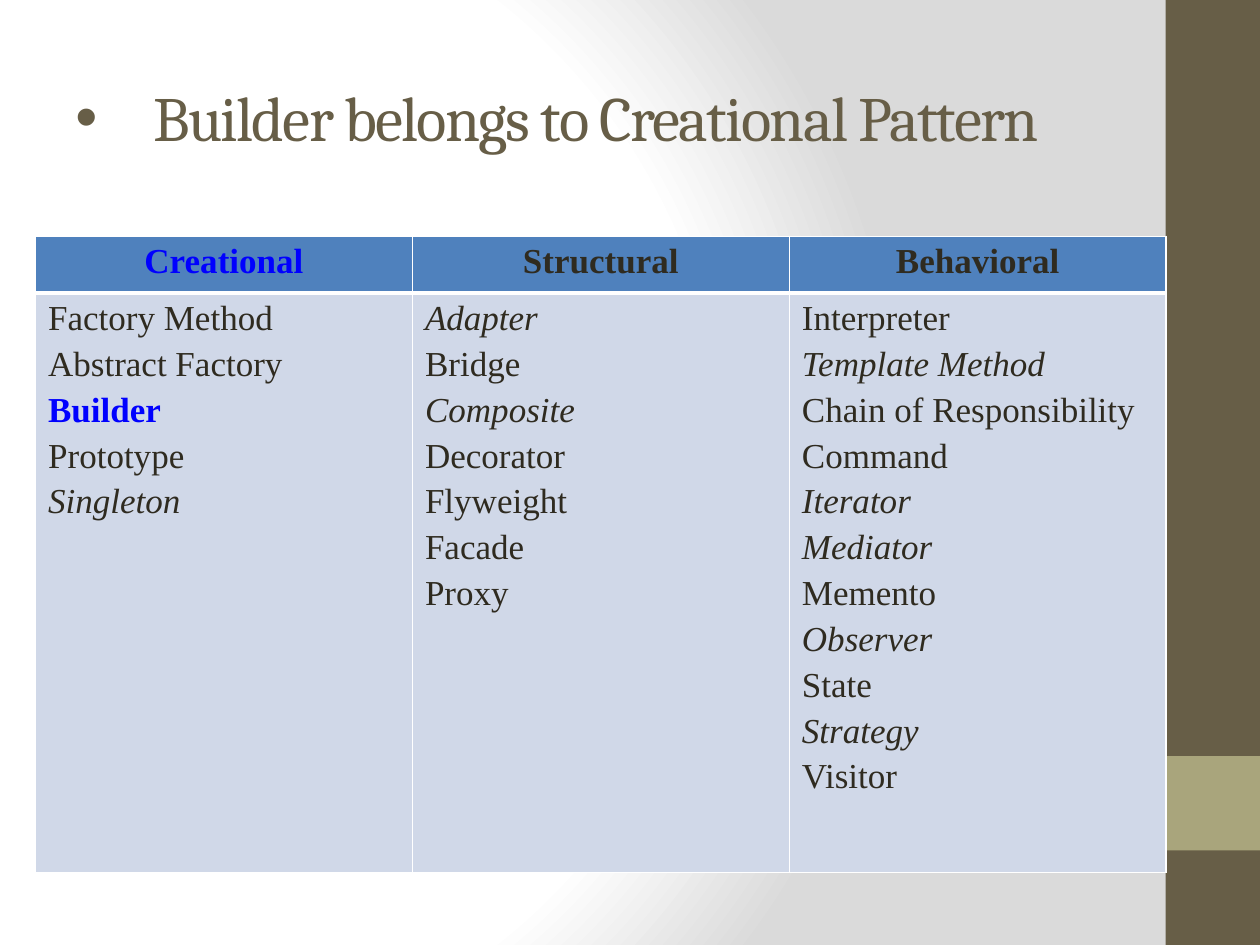
from dataclasses import dataclass

from lxml import etree
from pptx import Presentation
from pptx.dml.color import RGBColor
from pptx.enum import shapes, text
from pptx.oxml import parse_xml
from pptx.oxml.ns import nsdecls, qn
from pptx.util import Pt


@dataclass(frozen=True)
class Theme:
    brown: str = "675E47"
    olive: str = "A9A57C"
    ink: str = "2F2B20"
    highlight: str = "0000FF"
    header: str = "4F81BD"
    body: str = "D0D8E8"
    white: str = "FFFFFF"
    backdrop: str = "DADADA"
    title_font: str = "Cambria"
    table_font: str = "Times New Roman"
    title_size: float = 36
    table_size: float = 20


@dataclass(frozen=True)
class Box:
    left: float
    top: float
    width: float
    height: float

    def lengths(self) -> tuple:
        return tuple(Pt(n) for n in (self.left, self.top, self.width, self.height))


@dataclass(frozen=True)
class Entry:
    name: str
    italic: bool = False
    bold: bool = False
    color: str = Theme.ink


@dataclass(frozen=True)
class Category:
    header: Entry
    patterns: tuple


THEME = Theme()
TITLE = "Builder belongs to Creational Pattern"
TITLE_BOX = Box(36, 21.6, 600, 90)
TITLE_INDENT = 44.64
TABLE_BOX = Box(20.3, 135, 646.2, 363.6)
HEADER_HEIGHT = 32.4
BANDS = (
    (Box(666, 0, 54, 540), THEME.brown),
    (Box(666, 432, 54, 54), THEME.olive),
)
CATEGORIES = (
    Category(
        Entry("Creational", bold=True, color=THEME.highlight),
        (Entry("Factory Method"), Entry("Abstract Factory"),
         Entry("Builder", bold=True, color=THEME.highlight),
         Entry("Prototype"), Entry("Singleton", italic=True)),
    ),
    Category(
        Entry("Structural", bold=True),
        (Entry("Adapter", italic=True), Entry("Bridge"),
         Entry("Composite", italic=True), Entry("Decorator"),
         Entry("Flyweight"), Entry("Facade"), Entry("Proxy")),
    ),
    Category(
        Entry("Behavioral", bold=True),
        (Entry("Interpreter"), Entry("Template Method", italic=True),
         Entry("Chain of Responsibility"), Entry("Command"),
         Entry("Iterator", italic=True), Entry("Mediator", italic=True),
         Entry("Memento"), Entry("Observer", italic=True), Entry("State"),
         Entry("Strategy", italic=True), Entry("Visitor")),
    ),
)


def paint_background(slide) -> None:
    """Fill the slide with a radial gradient from white to grey."""
    slide.background.fill.solid()
    properties = slide.element.find(".//" + qn("p:bgPr"))
    stops = "".join(
        f'<a:gs pos="{position * 1000}"><a:srgbClr val="{color}"/></a:gs>'
        for position, color in ((0, THEME.white), (75, THEME.white), (100, THEME.backdrop))
    )
    gradient = parse_xml(
        f'<a:gradFill {nsdecls("a")} rotWithShape="1"><a:gsLst>{stops}</a:gsLst>'
        '<a:path path="circle"><a:fillToRect l="20000" t="50000" r="100000" b="50000"/>'
        "</a:path></a:gradFill>"
    )
    properties.replace(properties.find(qn("a:solidFill")), gradient)


def add_band(slide, box: Box, color: str) -> None:
    shape = slide.shapes.add_shape(shapes.MSO_SHAPE.RECTANGLE, *box.lengths())
    shape.shadow.inherit = False
    shape.fill.solid()
    shape.fill.fore_color.rgb = RGBColor.from_string(color)
    shape.line.fill.background()


def add_run(paragraph, entry: Entry, font_name: str, size: float):
    run = paragraph.add_run()
    run.text = entry.name
    font_format = {"name": font_name, "size": Pt(size),
                   "bold": entry.bold, "italic": entry.italic}
    for attribute, value in font_format.items():
        setattr(run.font, attribute, value)
    run.font.color.rgb = RGBColor.from_string(entry.color)
    return run


def add_title(slide) -> None:
    frame = slide.shapes.add_textbox(*TITLE_BOX.lengths()).text_frame
    frame.word_wrap = True
    frame.vertical_anchor = text.MSO_ANCHOR.MIDDLE
    paragraph = frame.paragraphs[0]
    run = add_run(paragraph, Entry(TITLE, color=THEME.brown),
                  THEME.title_font, THEME.title_size)
    run.font._element.set("spc", "-100")
    properties = paragraph._p.get_or_add_pPr()
    properties.set("marL", str(Pt(TITLE_INDENT)))
    properties.set("indent", str(-Pt(TITLE_INDENT)))
    etree.SubElement(properties, qn("a:buFont"), typeface="Arial")
    etree.SubElement(properties, qn("a:buChar"), char="•")


def set_borders(cell, widths: dict) -> None:
    """Draw white cell borders; widths maps L, R, T and B to points."""
    properties = cell._tc.get_or_add_tcPr()
    for index, (side, width) in enumerate(widths.items()):
        properties.insert(index, parse_xml(
            f'<a:ln{side} {nsdecls("a")} w="{Pt(width)}"><a:solidFill>'
            f'<a:srgbClr val="{THEME.white}"/></a:solidFill></a:ln{side}>'
        ))


def fill_cell(cell, entries: tuple, fill: str, alignment, borders: dict) -> None:
    cell.fill.solid()
    cell.fill.fore_color.rgb = RGBColor.from_string(fill)
    set_borders(cell, borders)
    frame = cell.text_frame
    for index, entry in enumerate(entries):
        paragraph = frame.add_paragraph() if index else frame.paragraphs[0]
        paragraph.alignment = alignment
        spacing = etree.SubElement(paragraph._p.get_or_add_pPr(), qn("a:spcBef"))
        etree.SubElement(spacing, qn("a:spcPct"), val="20000")
        add_run(paragraph, entry, THEME.table_font, THEME.table_size)


def add_pattern_table(slide) -> None:
    table = slide.shapes.add_table(2, len(CATEGORIES), *TABLE_BOX.lengths()).table
    table.horz_banding = False
    table.rows[0].height = Pt(HEADER_HEIGHT)
    table.rows[1].height = Pt(TABLE_BOX.height - HEADER_HEIGHT)
    for index, category in enumerate(CATEGORIES):
        table.columns[index].width = Pt(TABLE_BOX.width / len(CATEGORIES))
        fill_cell(table.cell(0, index), (category.header,), THEME.header,
                  text.PP_ALIGN.CENTER, {"L": 1, "R": 1, "T": 1, "B": 3})
        fill_cell(table.cell(1, index), category.patterns, THEME.body,
                  text.PP_ALIGN.LEFT, {"L": 1, "R": 1, "T": 3, "B": 1})


def main() -> None:
    presentation = Presentation()
    presentation.slide_width, presentation.slide_height = Pt(720), Pt(540)
    slide = presentation.slides.add_slide(presentation.slide_layouts[6])
    paint_background(slide)
    for box, color in BANDS:
        add_band(slide, box, color)
    add_title(slide)
    add_pattern_table(slide)
    presentation.save("out.pptx")


if __name__ == "__main__":
    main()
